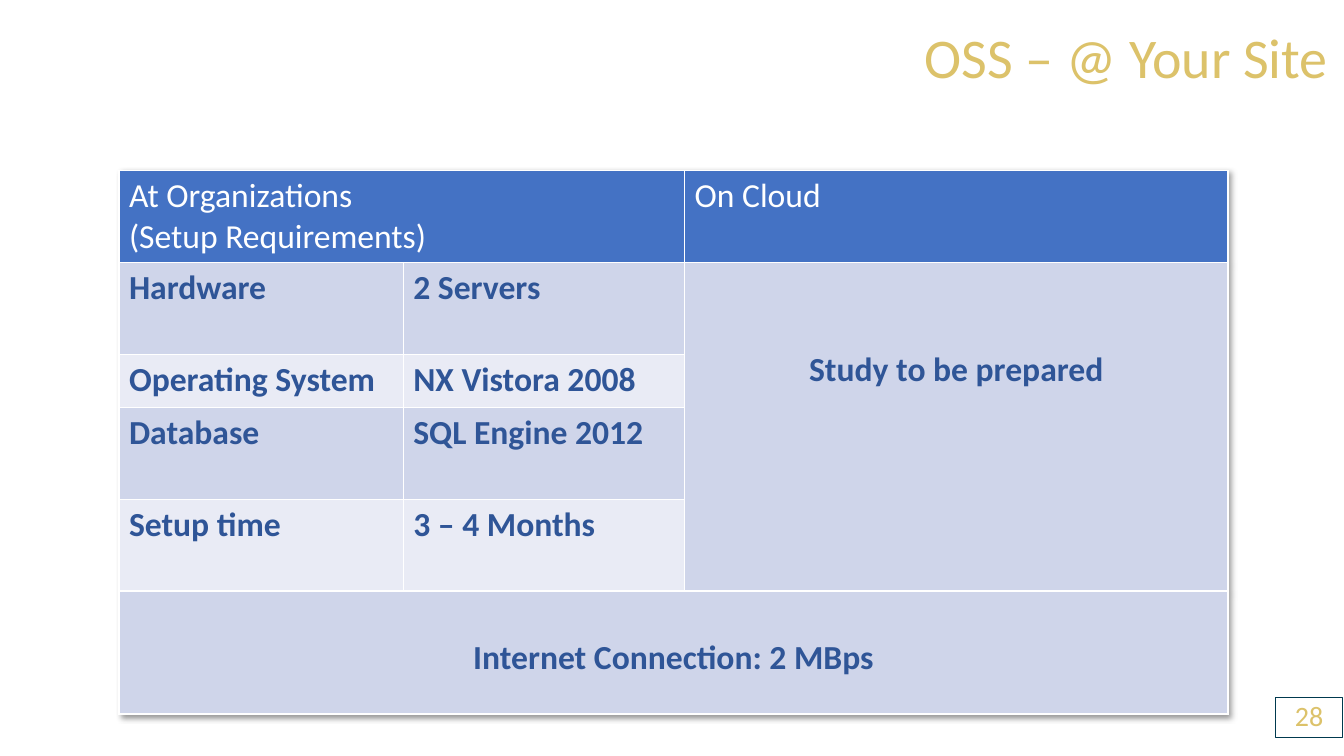
"""Builds the slide on setup needs at your site."""
from lxml import etree
from pptx import Presentation
from pptx import util as u
from pptx.dml.color import RGBColor
from pptx.enum import shapes, text

HUES = {"gold": "DCC26A", "navy": "00394E", "head": "4472C4", "ink": "2F5597",
        "dark": "CFD5EA", "light": "E9EBF5", "white": "FFFFFF"}
NS = "http://schemas.openxmlformats.org/drawingml/2006/main"
SHADE = (f'<a:effectLst xmlns:a="{NS}"><a:outerShdw blurRad="50800" dist="38100" '
         'dir="2700000" algn="tl" rotWithShape="0"><a:prstClr val="black">'
         '<a:alpha val="40000"/></a:prstClr></a:outerShdw></a:effectLst>')
LEFT, MID, RIGHT = text.PP_ALIGN.LEFT, text.PP_ALIGN.CENTER, text.PP_ALIGN.RIGHT


def hue(name):
    """Returns the named colour."""
    return RGBColor.from_string(HUES[name])


class Page:
    """Holds the style and the current slide."""

    def __init__(self, deck):
        """Adds a slide with a title only."""
        self.face = "Calibri"
        self.slide = deck.slides.add_slide(deck.slide_layouts[5])

    def label(self, frame, words, size, tint, align=LEFT, bold=False, gap=1.0):
        """Fills a text frame with one paragraph per line."""
        frame.text = words
        look = {"name": self.face, "size": u.Pt(size), "bold": bold}
        for para in frame.paragraphs:
            para.alignment, para.line_spacing = align, gap
            para.space_before = u.Pt(0)
            for run in para.runs:
                for key, value in look.items():
                    setattr(run.font, key, value)
                run.font.color.rgb = hue(tint)

    def title(self, words, box):
        """Places the heading."""
        head = self.slide.shapes.title
        for key, value in zip(("left", "top", "width", "height"), box):
            setattr(head, key, u.Inches(value))
        frame = head.text_frame
        frame.auto_size = text.MSO_AUTO_SIZE.NONE
        frame.vertical_anchor = text.MSO_ANCHOR.MIDDLE
        self.label(frame, words, 40, "gold", RIGHT, gap=0.9)

    def badge(self, words, box):
        """Draws the framed page number."""
        rect = self.slide.shapes.add_shape(
            shapes.MSO_SHAPE.RECTANGLE, *map(u.Inches, box))
        rect.shadow.inherit = False
        rect.fill.background()
        rect.line.color.rgb = hue("navy")
        rect.line.width = u.Pt(0.75)
        rect.text_frame.vertical_anchor = text.MSO_ANCHOR.MIDDLE
        self.label(rect.text_frame, words, 20, "gold", MID, gap=0.9)

    def table(self, spot, wide, high, spans, cells):
        """Draws the table with a soft shadow."""
        frame = self.slide.shapes.add_table(
            len(high), len(wide), *map(u.Inches, (*spot, sum(wide), sum(high))))
        grid = frame.table
        grid._tbl.tblPr.insert(0, etree.fromstring(SHADE))
        for col, size in zip(grid.columns, wide):
            col.width = u.Inches(size)
        for row, size in zip(grid.rows, high):
            row.height = u.Inches(size)
        for start, end in spans:
            grid.cell(*start).merge(grid.cell(*end))
        for (row, col), (words, fill, align, top) in cells.items():
            cell = grid.cell(row, col)
            cell.fill.solid()
            cell.fill.fore_color.rgb = hue(fill)
            cell.margin_top = u.Inches(top)
            self.label(cell.text_frame, words, 24, "ink" if row else "white",
                       align, bold=row > 0)


def main():
    """Builds and saves the deck."""
    deck = Presentation()
    deck.slide_width, deck.slide_height = u.Inches(13.33), u.Inches(7.5)
    page = Page(deck)
    page.title("OSS – @ Your Site", (4.63, 0.25, 8.64, 0.69))
    needs = [("Hardware", "2 Servers"), ("Operating System", "NX Vistora 2008"),
             ("Database", "SQL Engine 2012"), ("Setup time", "3 – 4 Months")]
    cells = {(0, 0): ("At Organizations\n(Setup Requirements)", "head", LEFT, 0.05),
             (0, 2): ("On Cloud", "head", LEFT, 0.05),
             (1, 2): ("Study to be prepared", "dark", MID, 0.86),
             (5, 0): ("Internet Connection: 2 MBps", "dark", MID, 0.46)}
    for row, pair in enumerate(needs, 1):
        for col, words in enumerate(pair):
            cells[row, col] = (words, "dark" if row % 2 else "light", LEFT, 0.05)
    page.table((1.18, 1.69), (2.82, 2.79, 5.39),
               (0.91, 0.91, 0.53, 0.91, 0.91, 1.22),
               [((0, 0), (0, 1)), ((1, 2), (4, 2)), ((5, 0), (5, 2))], cells)
    page.badge("28", (12.65, 6.92, 0.67, 0.4))
    deck.save("out.pptx")


if __name__ == "__main__":
    main()
